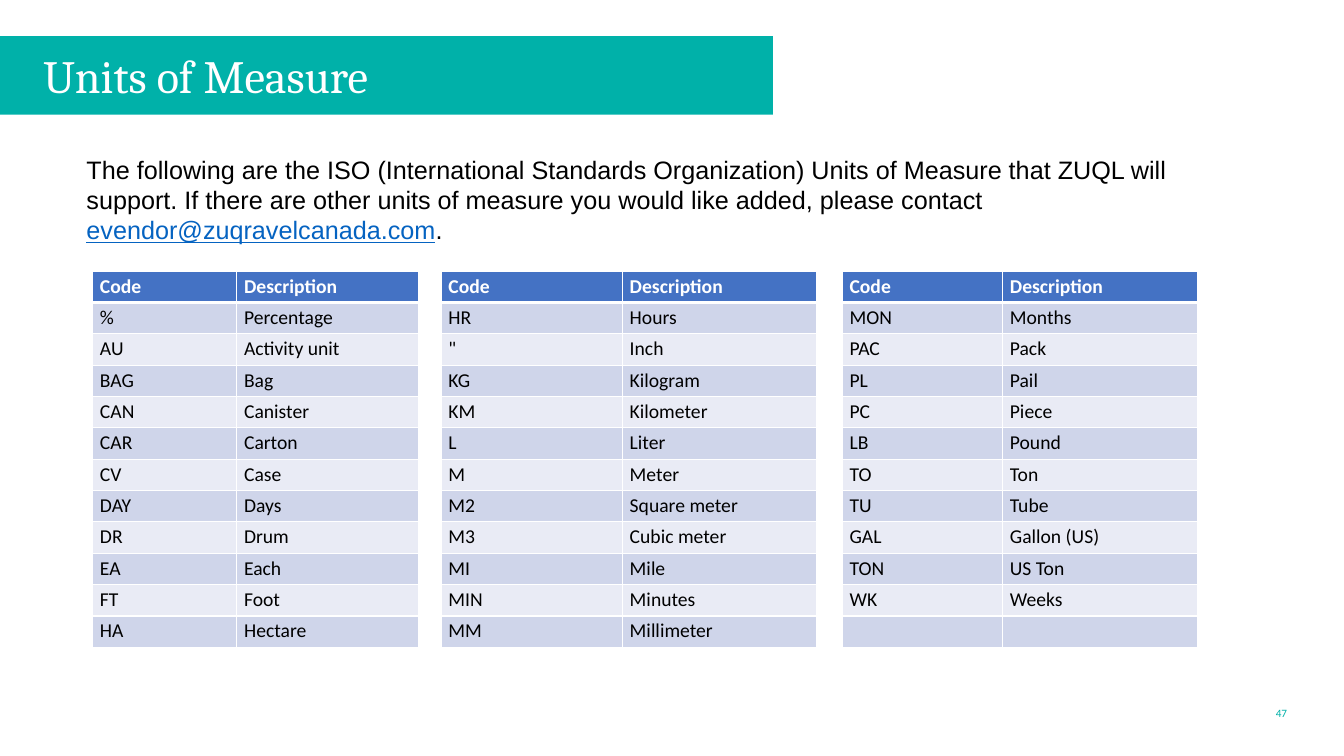
from lxml import etree
from pptx import Presentation
from pptx.dml.color import RGBColor
from pptx.enum.text import MSO_ANCHOR, MSO_AUTO_SIZE, PP_ALIGN
from pptx.oxml.ns import qn
from pptx.util import Cm, Pt

MIDDLE = MSO_ANCHOR.MIDDLE
FIXED = MSO_AUTO_SIZE.NONE
LEFT, RIGHT = PP_ALIGN.LEFT, PP_ALIGN.RIGHT
TEAL, WHITE, BLACK, LINK = "00B1A9", "FFFFFF", "000000", "0563C1"
HEAD, BANDS = "4472C4", ("E9EBF5", "CFD5EA")
WIDTHS = (3.63, 4.57, 0.58, 4.57, 4.9, 0.64, 4.04, 4.9)
HEIGHT = 0.79
INTRO = (
    ("The following are the ISO (International Standards Organization) "
     "Units of Measure that ZUQL will support. If there are other units of "
     "measure you would like added, please contact ", BLACK),
    ("evendor@zuqravelcanada.com", LINK),
    (".", BLACK),
)
UNITS = (
    (("%", "Percentage"), ("AU", "Activity unit"), ("BAG", "Bag"),
     ("CAN", "Canister"), ("CAR", "Carton"), ("CV", "Case"), ("DAY", "Days"),
     ("DR", "Drum"), ("EA", "Each"), ("FT", "Foot"), ("HA", "Hectare")),
    (("HR", "Hours"), ('"', "Inch"), ("KG", "Kilogram"), ("KM", "Kilometer"),
     ("L", "Liter"), ("M", "Meter"), ("M2", "Square meter"),
     ("M3", "Cubic meter"), ("MI", "Mile"), ("MIN", "Minutes"),
     ("MM", "Millimeter")),
    (("MON", "Months"), ("PAC", "Pack"), ("PL", "Pail"), ("PC", "Piece"),
     ("LB", "Pound"), ("TO", "Ton"), ("TU", "Tube"), ("GAL", "Gallon (US)"),
     ("TON", "US Ton"), ("WK", "Weeks")),
)


def color(code):
    return RGBColor.from_string(code)


def paint(item, code):
    item.fill.solid()
    item.fill.fore_color.rgb = color(code)


def style(run, face, size, code, bold=False):
    run.font.name = face
    run.font.size = Pt(size)
    run.font.bold = bold
    run.font.color.rgb = color(code)


def add_title(slide):
    title = slide.shapes.title
    title.left, title.top = Cm(0), Cm(0.91)
    title.width, title.height = Cm(19.48), Cm(1.98)
    paint(title, TEAL)
    frame = title.text_frame
    frame.text = "Units of Measure"
    frame.auto_size = FIXED
    frame.vertical_anchor = MIDDLE
    frame.margin_left = Cm(1.09)
    frame.margin_top = frame.margin_right = frame.margin_bottom = 0
    para = frame.paragraphs[0]
    para.alignment = LEFT
    style(para.runs[0], "Cambria", 33, WHITE)


def add_intro(slide):
    box = slide.shapes.add_textbox(Cm(1.93), Cm(3.76), Cm(30), Cm(2.57))
    frame = box.text_frame
    frame.word_wrap = True
    for text, code in INTRO:
        run = frame.paragraphs[0].add_run()
        run.text = text
        style(run, "Arial", 18, code)
        run.font.underline = code == LINK


def add_page(slide):
    box = slide.shapes.add_textbox(Cm(31.93), Cm(17.45), Cm(0.51), Cm(1.02))
    frame = box.text_frame
    frame.text = "47"
    frame.vertical_anchor = MIDDLE
    frame.margin_left, frame.margin_right = Cm(0.13), 0
    para = frame.paragraphs[0]
    para.alignment = RIGHT
    style(para.runs[0], "Calibri", 8, TEAL)


def add_edge(cell, side, width):
    props = cell._tc.get_or_add_tcPr()
    line = etree.SubElement(props, qn("a:ln" + side), w=str(Pt(width)))
    fill = etree.SubElement(line, qn("a:solidFill"))
    etree.SubElement(fill, qn("a:srgbClr"), val=WHITE)


def fill_cell(cell, text, row, gap):
    cell.margin_left = Cm(0.18)
    cell.margin_top = cell.margin_right = cell.margin_bottom = 0
    thick = {"T": 1, "B": 0}
    for side in "LRTB":
        add_edge(cell, side, 3 if thick.get(side) == row else 1)
    band = BANDS[row % 2] if row else HEAD
    paint(cell, WHITE if gap else band)
    if text:
        cell.text_frame.text = text
        para = cell.text_frame.paragraphs[0]
        para.line_spacing = 1.14
        para.space_before = Pt(1.9)
        style(para.runs[0], "Calibri", 14, BLACK if row else WHITE, row == 0)


def add_units(slide):
    count = 1 + max(len(group) for group in UNITS)
    frame = slide.shapes.add_table(count, len(WIDTHS), Cm(2.34), Cm(6.83),
                                   Cm(sum(WIDTHS)), Cm(HEIGHT * count))
    table = frame.table
    table.first_row = table.horz_banding = False
    for column, width in zip(table.columns, WIDTHS):
        column.width = Cm(width)
    for row in range(count):
        table.rows[row].height = Cm(HEIGHT)
        for col in range(len(WIDTHS)):
            block, part = divmod(col, 3)
            group = (("Code", "Description"),) + UNITS[block]
            gap = part == 2
            text = "" if gap or row >= len(group) else group[row][part]
            fill_cell(table.cell(row, col), text, row, gap)


def main():
    deck = Presentation()
    deck.slide_width, deck.slide_height = Cm(33.87), Cm(19.05)
    slide = deck.slides.add_slide(deck.slide_layouts[5])
    add_page(slide)
    add_title(slide)
    add_intro(slide)
    add_units(slide)
    deck.save("out.pptx")


if __name__ == "__main__":
    main()
